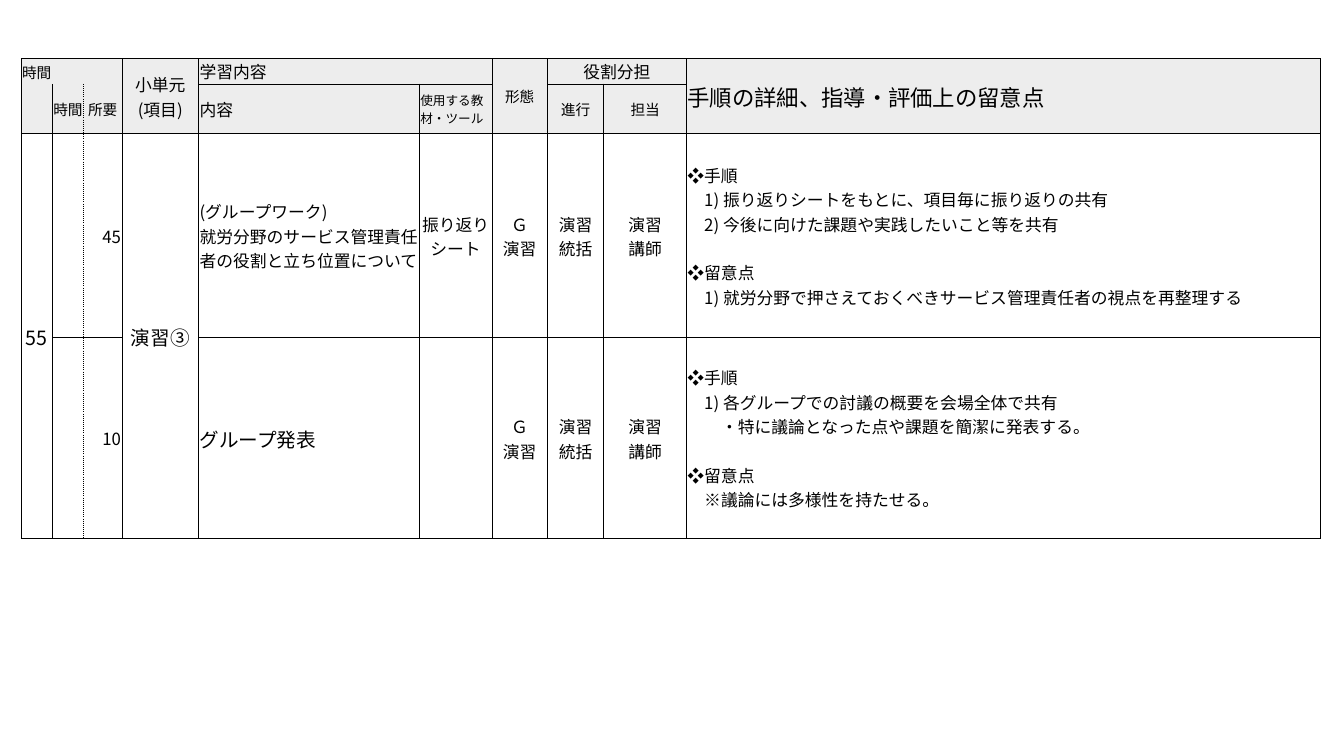
from dataclasses import dataclass
from lxml.etree import SubElement as Sub
from pptx import Presentation
from pptx.dml.color import RGBColor as Rgb
from pptx.enum.text import MSO_ANCHOR as Anchor, PP_ALIGN as Align
from pptx.oxml.ns import qn
from pptx.util import Inches, Pt


@dataclass(frozen=True)
class Theme:
    """Colours, type sizes and fonts of the slide."""
    ink: str = "000000"
    head: str = "EDEDED"
    body: str = "FFFFFF"
    font: str = "Noto Sans CJK JP"
    tiny: float = 9
    small: float = 10.5
    base: float = 12
    large: float = 14
    title: float = 16
    gap: float = 17.4
    line: float = 0.5


T = Theme()
LEFT, TOP = 0.21, 0.58
COLS = [0.31, 0.31, 0.38, 0.76, 2.19, 0.72, 0.55, 0.56, 0.82, 6.29]
ROWS = [0.25, 0.49, 2.02, 2]
HEADS = 2
L, C, R = Align.LEFT, Align.CENTER, Align.RIGHT

SPANS = [(0, 0, 0, 2), (0, 3, 1, 3), (0, 4, 0, 5), (0, 6, 1, 6),
         (0, 7, 0, 8), (0, 9, 1, 9), (2, 0, 3, 0), (2, 3, 3, 3)]

CELLS = [
    (0, 0, "時間", T.small, L),
    (0, 3, "小単元\n(項目)", T.base, C),
    (0, 4, "学習内容", T.base, L),
    (0, 6, "形態", T.small, C),
    (0, 7, "役割分担", T.base, C),
    (0, 9, "手順の詳細、指導・評価上の留意点", T.title, L),
    (1, 1, "時間", T.small, C),
    (1, 2, "所要", T.small, C),
    (1, 4, "内容", T.base, L),
    (1, 5, "使用する教材・ツール", T.tiny, L),
    (1, 7, "進行", T.small, C),
    (1, 8, "担当", T.small, C),
    (2, 0, "55", T.large, C),
    (2, 2, "45", T.base, R),
    (2, 3, "演習③", T.large, C),
    (2, 4, "(グループワーク)\n就労分野のサービス管理責任者の役割と立ち位置について",
     T.base, L),
    (2, 5, "振り返りシート", T.base, C),
    (3, 2, "10", T.base, R),
    (3, 4, "グループ発表", T.large, L),
]

STAFF = {6: "Ｇ\n演習", 7: "演習\n統括", 8: "演習\n講師"}

NOTES = {
    2: [(0, "❖手順"),
        (1, "1) 振り返りシートをもとに、項目毎に振り返りの共有"),
        (1, "2) 今後に向けた課題や実践したいこと等を共有"),
        (0, "❖留意点"),
        (1, "1) 就労分野で押さえておくべきサービス管理責任者の視点を再整理する")],
    3: [(0, "❖手順"),
        (1, "1) 各グループでの討議の概要を会場全体で共有"),
        (2, "・特に議論となった点や課題を簡潔に発表する。"),
        (0, "❖留意点"),
        (1, "※議論には多様性を持たせる。")],
}


def edge(cell, side, dash):
    """Draw one cell border, or hide it when dash is None."""
    line = Sub(cell._tc.get_or_add_tcPr(), qn("a:ln" + side),
               w=str(Pt(T.line)))
    if dash is None:
        Sub(line, qn("a:noFill"))
        return
    Sub(Sub(line, qn("a:solidFill")), qn("a:srgbClr"), val=T.ink)
    Sub(line, qn("a:prstDash"), val=dash)


def frame(cell, row, col):
    """Give a cell its margins, borders and fill."""
    cell.margin_left = cell.margin_top = cell.margin_right = Inches(0.01)
    cell.margin_bottom = 0
    cell.vertical_anchor = Anchor.MIDDLE
    dash = dict.fromkeys("LRTB", "solid")
    if row and col in (1, 2):
        dash["R" if col == 1 else "L"] = "sysDot"
    if row < HEADS and col < 3:
        dash["T" if row else "B"] = None
    for side in "LRTB":
        edge(cell, side, dash[side])
    cell.fill.solid()
    cell.fill.fore_color.rgb = Rgb.from_string(T.head if row < HEADS else T.body)


def put(par, text, size, align):
    """Add one styled run to a paragraph."""
    par.alignment = align
    run = par.add_run()
    run.text = text
    run.font.size = Pt(size)
    run.font.name = T.font
    run.font.color.rgb = Rgb.from_string(T.ink)
    Sub(run.font._element, qn("a:ea"), typeface=T.font)


def fill(cell, lines, size, align):
    """Write lines of (level, text), with a gap before each later section."""
    frame = cell.text_frame
    for num, (level, text) in enumerate(lines):
        par = frame.add_paragraph() if num else frame.paragraphs[0]
        put(par, text, size, align)
        if level:
            props = par._p.get_or_add_pPr()
            props.set("marL", str(Pt(level * size)))
            props.set("indent", "0")
        elif num and text.startswith("❖"):
            par.space_before = Pt(T.gap)


def grid(slide):
    """Add the framed and merged table."""
    table = slide.shapes.add_table(
        len(ROWS), len(COLS), Inches(LEFT), Inches(TOP),
        Inches(sum(COLS)), Inches(sum(ROWS))).table
    table.first_row = table.horz_banding = False
    for col, width in zip(table.columns, COLS):
        col.width = Inches(width)
    for row, height in zip(table.rows, ROWS):
        row.height = Inches(height)
    for row in range(len(ROWS)):
        for col in range(len(COLS)):
            frame(table.cell(row, col), row, col)
    for top, left, end, right in SPANS:
        table.cell(top, left).merge(table.cell(end, right))
    return table


def main():
    """Build the timetable slide."""
    deck = Presentation()
    deck.slide_width, deck.slide_height = Inches(13.33), Inches(7.5)
    table = grid(deck.slides.add_slide(deck.slide_layouts[6]))
    staff = [(row, col, text, T.base, C)
             for row in NOTES for col, text in STAFF.items()]
    for row, col, text, size, align in CELLS + staff:
        lines = [(0, part) for part in text.split("\n")]
        fill(table.cell(row, col), lines, size, align)
    for row, lines in NOTES.items():
        fill(table.cell(row, len(COLS) - 1), lines, T.base, L)
    deck.save("out.pptx")


if __name__ == "__main__":
    main()
